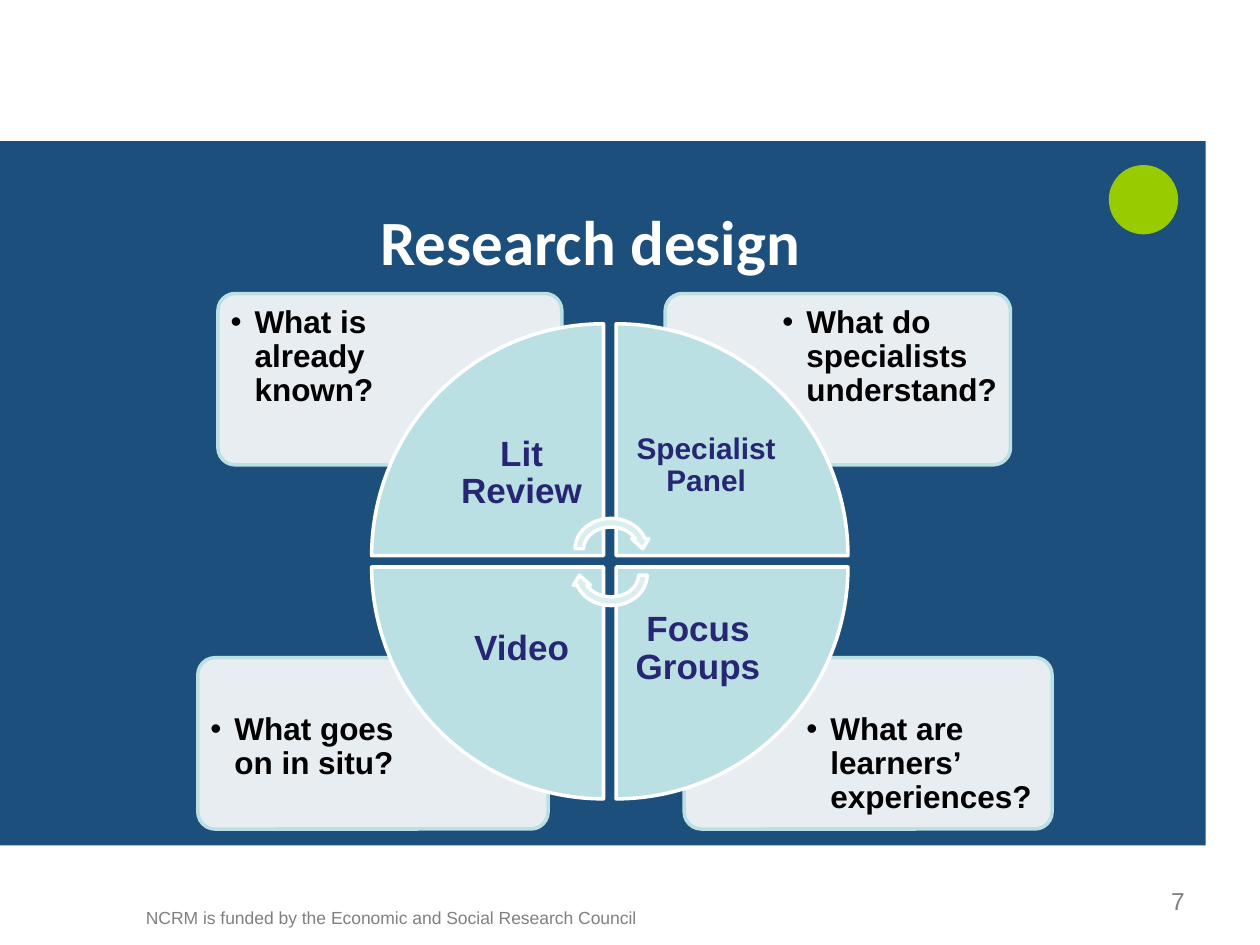
"""Build the research design slide: four methods in a cycle and the question each answers."""
from dataclasses import dataclass
from typing import Any

from lxml import etree
from pptx import Presentation
from pptx.dml.color import RGBColor
from pptx.enum import shapes, text
from pptx.oxml import ns
from pptx.util import Inches, Pt


@dataclass(frozen=True)
class Theme:
    """Colours, font names and type sizes of the slide."""
    navy: str = "1C4F7C"
    green: str = "99CC00"
    white: str = "FFFFFF"
    black: str = "000000"
    grey: str = "808080"
    aqua: str = "BBE0E3"
    pale: str = "DAEDEF"
    indigo: str = "262673"
    heading: str = "Calibri"
    body: str = "Arial"
    title_size: int = 36
    label_size: int = 20
    small_label_size: int = 17
    question_size: int = 18
    number_size: int = 14
    footer_size: int = 10


@dataclass(frozen=True)
class Box:
    """Left, top, width and height in inches."""
    left: float
    top: float
    width: float
    height: float

    def lengths(self) -> tuple:
        """Return the four values as lengths."""
        return tuple(map(Inches, (self.left, self.top, self.width, self.height)))


@dataclass(frozen=True)
class Question:
    """A card at one corner and the place of its bullet."""
    wording: str
    left: float
    top: float
    width: float
    text_left: float
    text_top: float
    text_width: float


@dataclass(frozen=True)
class Method:
    """A quarter of the circle, counted in columns and rows."""
    name: str
    column: int
    row: int
    rotation: int
    size: int = Theme.label_size
    insets: tuple = (0.14, 0.16, 0.14, 0.16)


THEME = Theme()
SHAPE = shapes.MSO_SHAPE
ALIGN = text.PP_ALIGN
MIDDLE = text.MSO_ANCHOR.MIDDLE
CARD_HEIGHT = 1.36
WEDGE = 1.84
LABEL = 1.3
WEDGE_LEFTS, WEDGE_TOPS = (2.95, 4.89), (2.57, 4.5)
LABEL_LEFTS, LABEL_TOPS = (3.49, 4.89), (3.11, 4.5)
DEFAULT_INSETS = (0.1, 0.05, 0.1, 0.05)
CARD_INSETS = (0.07, 0.07, 0.07, 0.07)

QUESTIONS = (
    Question("What are learners’ experiences?", 5.43, 5.22, 2.92, 6.33, 5.59, 1.98),
    Question("What goes on in situ?", 1.57, 5.22, 2.78, 1.6, 5.59, 1.89),
    Question("What do specialists understand?", 5.28, 2.33, 2.74, 6.14, 2.36, 1.86),
    Question("What is already known?", 1.73, 2.33, 2.73, 1.76, 2.36, 1.85),
)
METHODS = (
    Method("Lit Review", 0, 0, 0),
    Method("Specialist Panel", 1, 0, 90, THEME.small_label_size, (0.13, 0, 0, 0.13)),
    Method("Focus Groups", 1, 1, 180),
    Method("Video", 0, 1, 270),
)


def apply(target: Any, values: dict) -> None:
    """Set each named attribute on the target."""
    for name, value in values.items():
        setattr(target, name, value)


def draw_shape(slide: Any, kind: Any, box: Box, fill: str,
               line: str | None = None, rotation: int = 0) -> Any:
    """Draw a flat preset shape, outlined if a line colour is given."""
    shape = slide.shapes.add_shape(kind, *box.lengths())
    shape.shadow.inherit = False
    shape.rotation = rotation
    shape.fill.solid()
    shape.fill.fore_color.rgb = RGBColor.from_string(fill)
    if line:
        shape.line.color.rgb = RGBColor.from_string(line)
        shape.line.width = Pt(2)
    else:
        shape.line.fill.background()
    return shape


def write(shape: Any, wording: str, size: int, color: str, font: str = THEME.body,
          bold: bool = False, insets: tuple = DEFAULT_INSETS,
          frame_format: dict | None = None, paragraph_format: dict | None = None,
          bullet: bool = False) -> None:
    """Put one formatted paragraph in a shape."""
    frame = shape.text_frame
    sides = ("margin_left", "margin_top", "margin_right", "margin_bottom")
    apply(frame, dict(zip(sides, map(Inches, insets))))
    apply(frame, {"word_wrap": True, **(frame_format or {})})
    paragraph = frame.paragraphs[0]
    paragraph.text = wording
    if bullet:
        properties = paragraph._p.get_or_add_pPr()
        properties.set("marL", str(Inches(0.19)))
        properties.set("indent", str(-Inches(0.19)))
        etree.SubElement(properties, ns.qn("a:buFont"), typeface=font)
        etree.SubElement(properties, ns.qn("a:buChar"), char="•")
    apply(paragraph, paragraph_format or {})
    apply(paragraph.font, {"name": font, "size": Pt(size), "bold": bold})
    paragraph.font.color.rgb = RGBColor.from_string(color)


def draw_text(slide: Any, box: Box, wording: str, size: int, color: str,
              **options: Any) -> None:
    """Add a text box holding one paragraph."""
    write(slide.shapes.add_textbox(*box.lengths()), wording, size, color, **options)


def draw_question(slide: Any, question: Question) -> None:
    """Draw a translucent card and its bulleted question."""
    card = draw_shape(slide, SHAPE.ROUNDED_RECTANGLE,
                      Box(question.left, question.top, question.width, CARD_HEIGHT),
                      THEME.white, THEME.aqua)
    card.adjustments[0] = 0.1
    color = card.fill._xPr.find(ns.qn("a:solidFill"))[0]
    etree.SubElement(color, ns.qn("a:alpha"), val="90000")
    draw_text(slide, Box(question.text_left, question.text_top, question.text_width, 0.96),
              question.wording, THEME.question_size, THEME.black, bold=True,
              insets=CARD_INSETS, paragraph_format={"level": 1, "line_spacing": 0.9},
              bullet=True)


def draw_method(slide: Any, method: Method) -> None:
    """Draw a quarter of the circle and its label."""
    draw_shape(slide, SHAPE.PIE_WEDGE,
               Box(WEDGE_LEFTS[method.column], WEDGE_TOPS[method.row], WEDGE, WEDGE),
               THEME.aqua, THEME.white, method.rotation)
    draw_text(slide, Box(LABEL_LEFTS[method.column], LABEL_TOPS[method.row], LABEL, LABEL),
              method.name, method.size, THEME.indigo, bold=True, insets=method.insets,
              frame_format={"vertical_anchor": MIDDLE},
              paragraph_format={"alignment": ALIGN.CENTER, "line_spacing": 0.9})


def main() -> None:
    """Build and save the slide."""
    presentation = Presentation()
    apply(presentation, {"slide_width": Inches(10), "slide_height": Inches(7.5)})
    slide = presentation.slides.add_slide(presentation.slide_layouts[5])
    title = slide.shapes.title

    draw_shape(slide, SHAPE.RECTANGLE, Box(0, 1.12, 9.57, 5.59), THEME.navy)
    draw_shape(slide, SHAPE.OVAL, Box(8.8, 1.31, 0.55, 0.55), THEME.green)
    draw_text(slide, Box(1.06, 7.15, 4.17, 0.52),
              "NCRM is funded by the Economic and Social Research Council",
              THEME.footer_size, THEME.grey)

    slide.shapes._spTree.append(title._element)
    apply(title, dict(zip(("left", "top", "width", "height"),
                          Box(0.51, 1.47, 8.35, 0.87).lengths())))
    write(title, "Research design", THEME.title_size, THEME.white, THEME.heading, True,
          frame_format={"vertical_anchor": MIDDLE},
          paragraph_format={"alignment": ALIGN.CENTER})

    for question in QUESTIONS:
        draw_question(slide, question)
    for method in METHODS:
        draw_method(slide, method)
    for top, rotation in ((4.08, 0), (4.29, 180)):
        draw_shape(slide, SHAPE.CIRCULAR_ARROW, Box(4.53, top, 0.64, 0.55),
                   THEME.pale, THEME.white, rotation)
    draw_text(slide, Box(8.62, 6.98, 0.88, 0.37), "7", THEME.number_size, THEME.grey,
              paragraph_format={"alignment": ALIGN.RIGHT})
    presentation.save("out.pptx")


if __name__ == "__main__":
    main()
